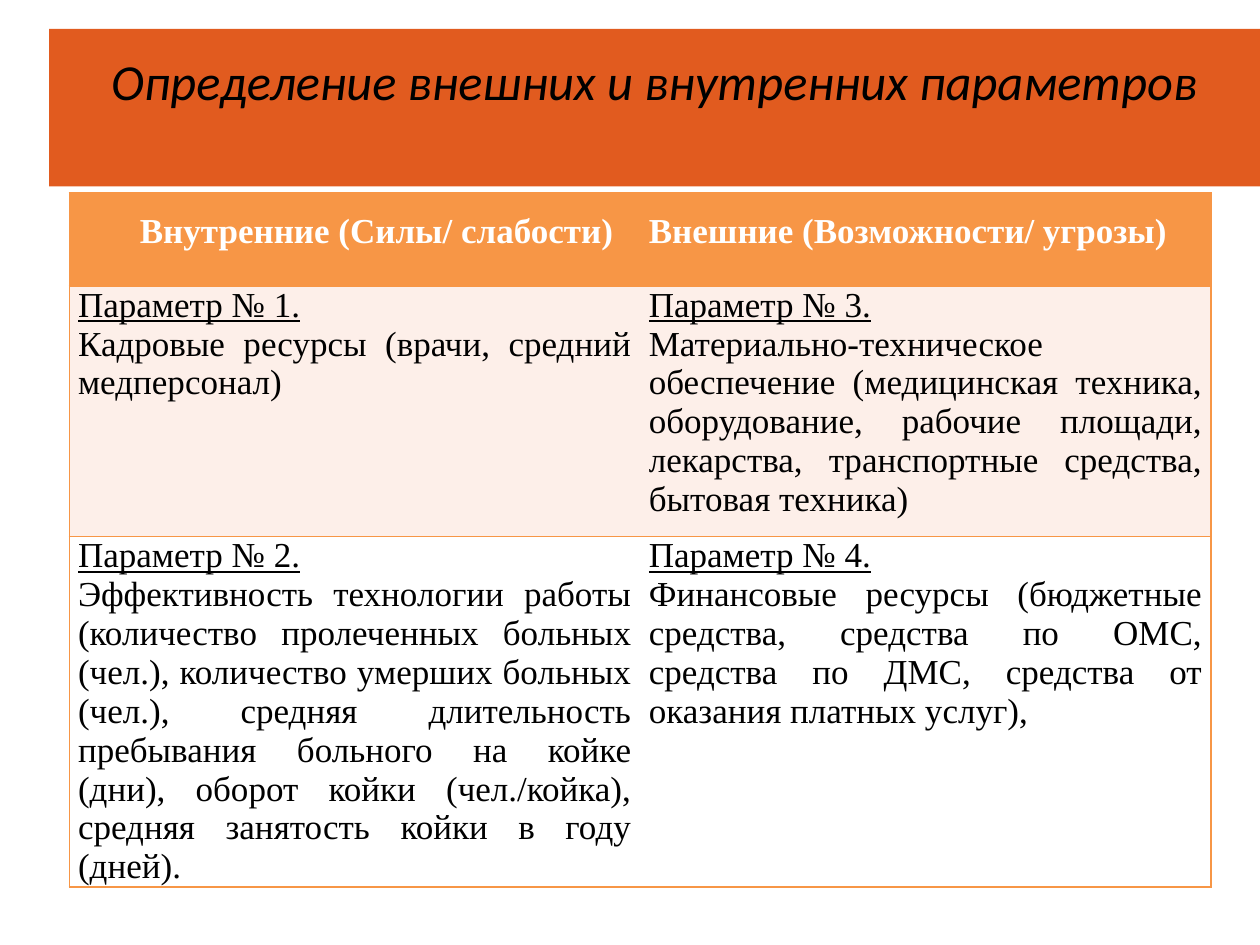
from dataclasses import dataclass

from lxml import etree
from pptx import Presentation
from pptx.dml.color import RGBColor
from pptx.enum.shapes import MSO_SHAPE
from pptx.enum.text import MSO_ANCHOR, PP_ALIGN
from pptx.oxml.ns import qn
from pptx.util import Inches, Pt

RECTANGLE = MSO_SHAPE.RECTANGLE
TOP = MSO_ANCHOR.TOP
CENTER, JUSTIFY = PP_ALIGN.CENTER, PP_ALIGN.JUSTIFY


@dataclass(frozen=True)
class Theme:
    banner: str = "E15B1F"
    accent: str = "F79646"
    band: str = "FDEFE9"
    white: str = "FFFFFF"
    black: str = "000000"
    title_font: str = "Calibri"
    table_font: str = "Times New Roman"
    title_size: float = 28.8
    table_size: float = 20


theme = Theme()


def style_font(font, name, size, color):
    font.name = name
    font.size = Pt(size)
    font.color.rgb = RGBColor.from_string(color)


def add_border(cell, side, color):
    """Draw a 1 pt line on one side of a cell, or none without a color."""
    line = etree.SubElement(cell._tc.get_or_add_tcPr(), qn(f"a:ln{side}"), w=str(Pt(1)))
    if color:
        fill = etree.SubElement(line, qn("a:solidFill"))
        etree.SubElement(fill, qn("a:srgbClr"), val=color)
    else:
        etree.SubElement(line, qn("a:noFill"))


deck = Presentation()
deck.slide_width, deck.slide_height = Inches(10), Inches(7.5)
page = deck.slides.add_slide(deck.slide_layouts[6])

# Title banner
banner = page.shapes.add_shape(RECTANGLE, Inches(0.39), Inches(0.23), Inches(9.61), Inches(1.25))
banner.shadow.inherit = False
banner.fill.solid()
banner.fill.fore_color.rgb = RGBColor.from_string(theme.banner)
banner.line.fill.background()
frame = banner.text_frame
frame.word_wrap = True
frame.vertical_anchor = TOP
frame.margin_top = Inches(0.17)
frame.text = "Определение внешних и внутренних параметров"
title = frame.paragraphs[0]
title.alignment = CENTER
title_font = title.runs[0].font
style_font(title_font, theme.title_font, theme.title_size, theme.black)
title_font.italic = True

# Parameter table: a header row, then a heading and a description per cell
rows = [
    ["Внутренние (Силы/ слабости)", "Внешние (Возможности/ угрозы)"],
    [
        "Параметр № 1.\nКадровые ресурсы (врачи, средний медперсонал)",
        "Параметр № 3.\nМатериально-техническое обеспечение (медицинская техника, "
        "оборудование, рабочие площади, лекарства, транспортные средства, "
        "бытовая техника)",
    ],
    [
        "Параметр № 2.\nЭффективность технологии работы (количество пролеченных "
        "больных (чел.), количество умерших больных (чел.), средняя длительность "
        "пребывания больного на койке (дни), оборот койки (чел./койка), "
        "средняя занятость койки в году (дней).",
        "Параметр № 4.\nФинансовые ресурсы (бюджетные средства, средства по ОМС, "
        "средства по ДМС, средства от оказания платных услуг),",
    ],
]
row_heights = [0.74, 1.99, 2.78]
row_fills = [theme.accent, theme.band, theme.white]

table = page.shapes.add_table(
    len(rows), 2, Inches(0.55), Inches(1.53), Inches(9.06), Inches(sum(row_heights))
).table
table.horz_banding = False

for row_index, texts in enumerate(rows):
    table.rows[row_index].height = Inches(row_heights[row_index])
    is_header = row_index == 0
    for column_index, text in enumerate(texts):
        cell = table.cell(row_index, column_index)
        cell.margin_left = cell.margin_right = Inches(0.07)
        cell.margin_top = cell.margin_bottom = 0

        # Outer frame and row rules, no line between the columns
        add_border(cell, "L", theme.accent if column_index == 0 else None)
        add_border(cell, "R", theme.accent if column_index == 1 else None)
        add_border(cell, "T", theme.accent)
        add_border(cell, "B", theme.accent)
        cell.fill.solid()
        cell.fill.fore_color.rgb = RGBColor.from_string(row_fills[row_index])

        cell.text_frame.text = text
        for para_index, para in enumerate(cell.text_frame.paragraphs):
            para.alignment = JUSTIFY
            span = para.runs[0]
            style_font(span.font, theme.table_font, theme.table_size,
                       theme.white if is_header else theme.black)
            span.font.bold = is_header
            span.font.underline = not is_header and para_index == 0
            if is_header:
                para.line_spacing = 1.5

# First-line indent of the left header
left_header = table.cell(0, 0).text_frame.paragraphs[0]
left_header._p.get_or_add_pPr().set("indent", str(Inches(0.49)))

deck.save("out.pptx")
